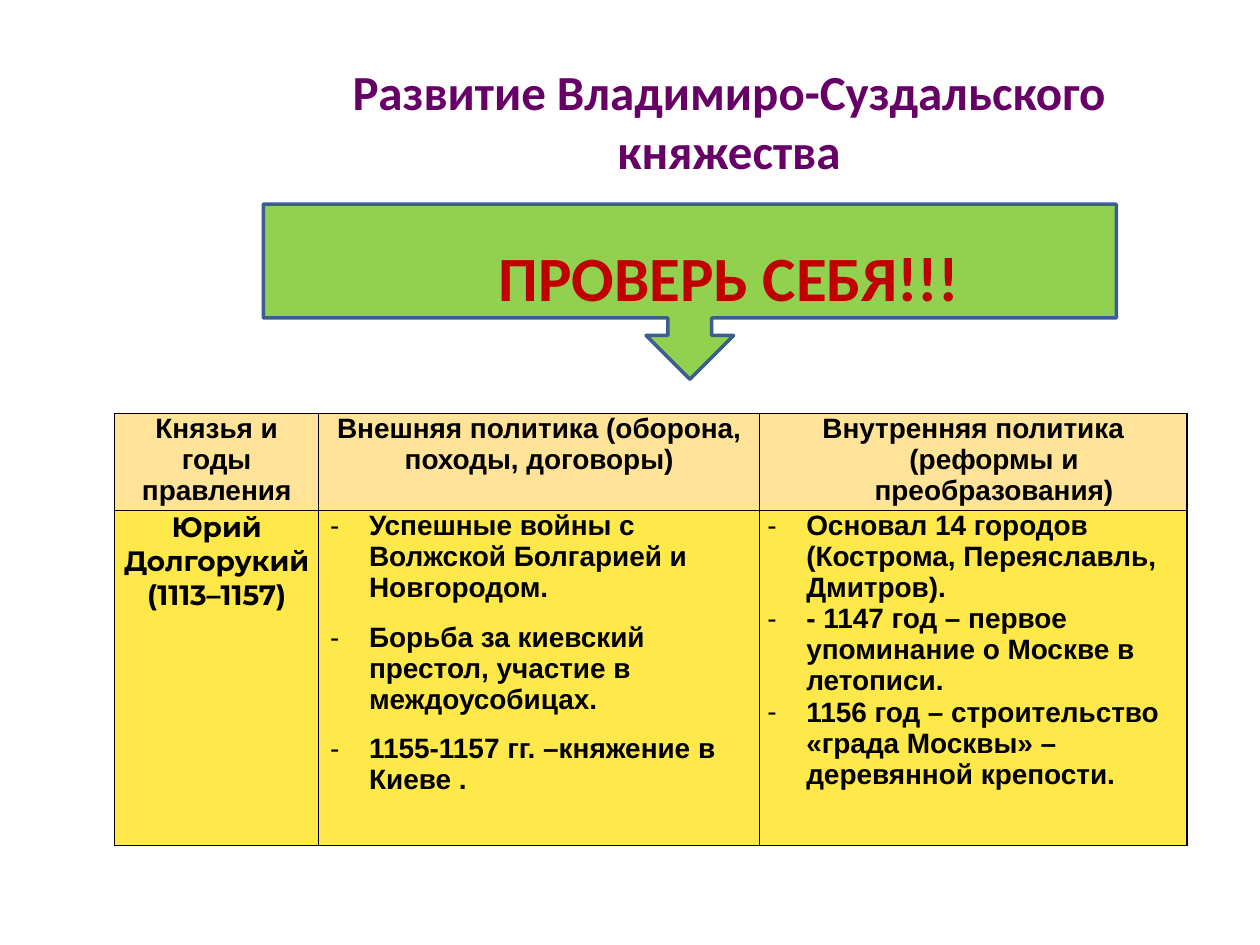
"""Build a history slide: a title, a callout arrow and a table on a prince's policies."""
from lxml import etree
from pptx import Presentation
from pptx import util as u
from pptx.dml import color
from pptx.enum import shapes, text
from pptx.oxml import ns

HEADS = [
    ["Князья и годы", "правления"],
    ["Внешняя политика (оборона, походы, договоры)"],
    ["Внутренняя политика (реформы и преобразования)"],
]
PRINCE = ["Юрий Долгорукий (1113–1157)"]
ABROAD = [
    "Успешные войны с Волжской Болгарией и Новгородом.",
    "Борьба за киевский престол, участие в междоусобицах.",
    "1155-1157 гг. –княжение в Киеве .",
]
HOME = [
    "Основал 14 городов (Кострома, Переяславль, Дмитров).",
    "- 1147 год – первое упоминание о Москве в летописи.",
    "1156 год – строительство «града Москвы» – деревянной крепости.",
]


def rgb(code):
    """Turn a hex string into a colour."""
    return color.RGBColor.from_string(code)


def sub(parent, tag, **attrs):
    """Add a drawing element with attributes to a parent."""
    return etree.SubElement(parent, ns.qn("a:" + tag), attrs)


def write(frame, lines, size=16, font="Arial", ink="000000", center=True,
          gap=0, left=0, hang=0, dash=False, more=False):
    """Write bold paragraphs into a frame, or add them to its end."""
    for i, line in enumerate(lines):
        first = i == 0 and not more
        para = frame.paragraphs[0] if first else frame.add_paragraph()
        para.alignment = text.PP_ALIGN.CENTER if center else text.PP_ALIGN.LEFT
        para.space_before = u.Pt(0 if first else gap)
        props = para._p.get_or_add_pPr()
        props.set("marL", str(u.Inches(left)))
        props.set("indent", str(u.Inches(-hang)))
        if dash:
            sub(props, "buFont", typeface=font)
            sub(props, "buChar", char="-")
        else:
            sub(props, "buNone")
        run = para.add_run()
        run.text = line
        run.font.size, run.font.name, run.font.bold = u.Pt(size), font, True
        run.font.color.rgb = rgb(ink)


def style(cell, fill):
    """Give a cell its margins, black borders and fill."""
    cell.margin_left = cell.margin_right = u.Inches(0.06)
    cell.margin_top = cell.margin_bottom = 0
    props = cell._tc.get_or_add_tcPr()
    for side in ("lnL", "lnR", "lnT", "lnB"):
        edge = sub(props, side, w=str(u.Pt(1)))
        sub(sub(edge, "solidFill"), "srgbClr", val="000000")
    cell.fill.solid()
    cell.fill.fore_color.rgb = rgb(fill)


def arrow(slide):
    """Draw the green callout that points at the table."""
    box = slide.shapes.add_shape(
        shapes.MSO_SHAPE.DOWN_ARROW_CALLOUT,
        u.Inches(2.09), u.Inches(1.62), u.Inches(6.77), u.Inches(1.39))
    box.shadow.inherit = False
    box.fill.solid()
    box.fill.fore_color.rgb = rgb("92D050")
    box.line.color.rgb = rgb("3A5F8C")
    box.line.width = u.Pt(2)


def grid(slide):
    """Add the table of foreign and home policy."""
    table = slide.shapes.add_table(
        2, 3, u.Inches(0.91), u.Inches(3.28), u.Inches(8.51), u.Inches(3.43)).table
    table.first_row = table.horz_banding = False
    for col, width in zip(table.columns, (1.62, 3.5, 3.39)):
        col.width = u.Inches(width)
    for row, height, fill in zip(table.rows, (0.77, 2.66), ("FFE399", "FFE84A")):
        row.height = u.Inches(height)
        for cell in row.cells:
            style(cell, fill)
    for i, head in enumerate(HEADS):
        inset = 0.33 if i == 2 else 0
        write(table.cell(0, i).text_frame, head, left=inset, hang=inset)
    write(table.cell(1, 0).text_frame, PRINCE, font="Montserrat")
    items = dict(center=False, hang=0.31, dash=True)
    write(table.cell(1, 1).text_frame, ABROAD, gap=10.5, left=0.34, **items)
    write(table.cell(1, 2).text_frame, HOME, left=0.31, **items)


def title(slide):
    """Fill the title and lay it over the callout."""
    box = slide.shapes.title
    box.left, box.top = u.Inches(2.32), u.Inches(0.44)
    box.width, box.height = u.Inches(6.93), u.Inches(2.12)
    frame = box.text_frame
    frame.word_wrap = True
    frame.auto_size = text.MSO_AUTO_SIZE.NONE
    frame.vertical_anchor = text.MSO_ANCHOR.TOP
    write(frame, ["Развитие Владимиро-Суздальского княжества"],
          size=28, font="Calibri", ink="660066")
    write(frame, ["ПРОВЕРЬ СЕБЯ!!!"],
          size=36, font="Calibri", ink="C00000", gap=34, more=True)
    slide.shapes._spTree.append(box._element)


def main():
    """Build and save the slide."""
    deck = Presentation()
    deck.slide_width, deck.slide_height = u.Inches(10), u.Inches(7.5)
    slide = deck.slides.add_slide(deck.slide_layouts[5])
    arrow(slide)
    grid(slide)
    title(slide)
    deck.save("out.pptx")


if __name__ == "__main__":
    main()
